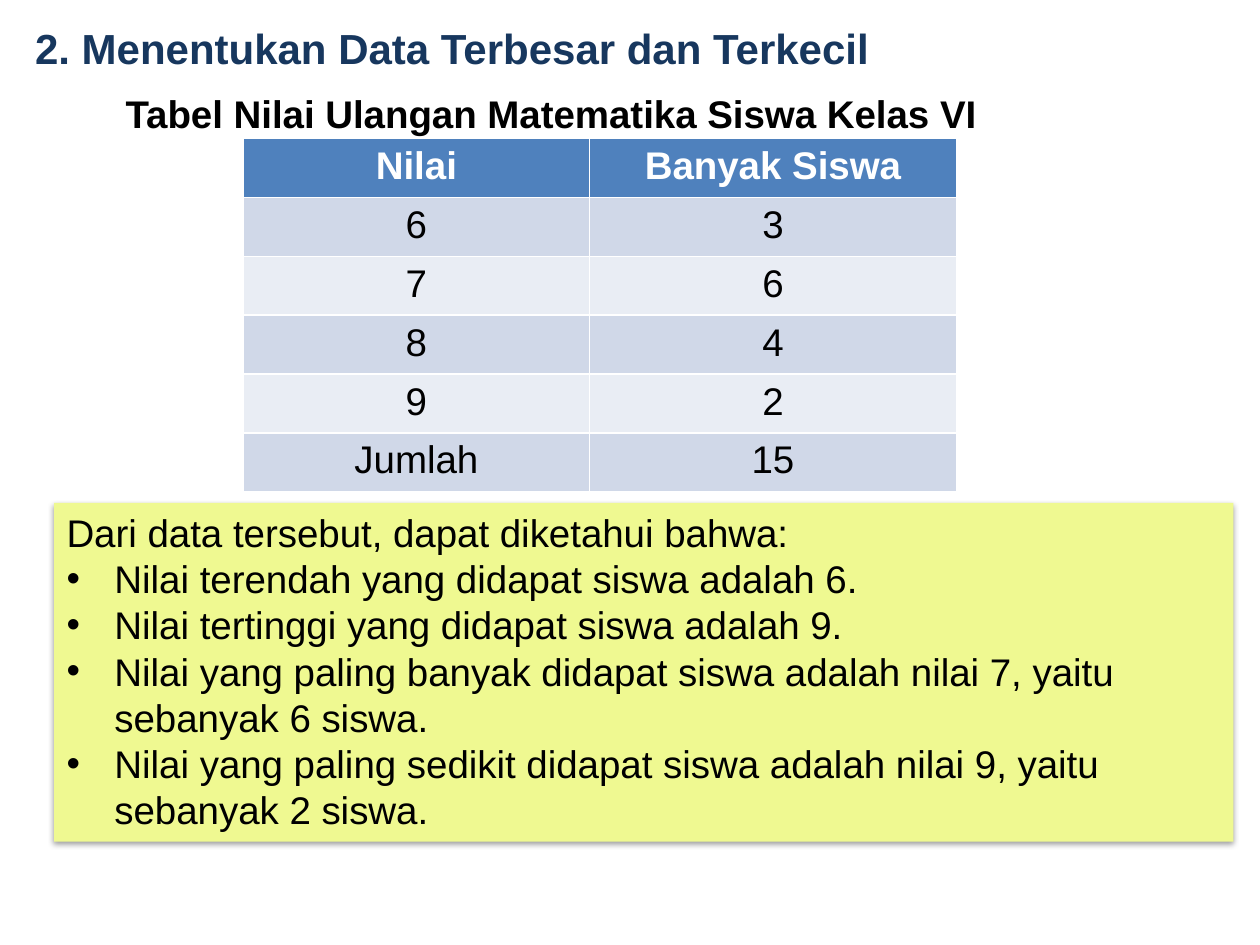
from lxml import etree
from pptx import Presentation
from pptx.dml.color import RGBColor
from pptx.enum.shapes import MSO_SHAPE
from pptx.enum.text import MSO_ANCHOR, PP_ALIGN
from pptx.oxml import parse_xml
from pptx.oxml.ns import nsdecls, qn
from pptx.util import Inches, Pt

LEFT, CENTER = PP_ALIGN.LEFT, PP_ALIGN.CENTER
RECTANGLE, TOP, MIDDLE = MSO_SHAPE.RECTANGLE, MSO_ANCHOR.TOP, MSO_ANCHOR.MIDDLE

# Content
HEADING = "2. Menentukan Data Terbesar dan Terkecil"
CAPTION = "Tabel Nilai Ulangan Matematika Siswa Kelas VI"
SCORES = [
    ("Nilai", "Banyak Siswa"),
    ("6", "3"),
    ("7", "6"),
    ("8", "4"),
    ("9", "2"),
    ("Jumlah", "15"),
]
FINDINGS_INTRO = "Dari data tersebut, dapat diketahui bahwa:"
FINDINGS = [
    "Nilai terendah yang didapat siswa adalah 6.",
    "Nilai tertinggi yang didapat siswa adalah 9.",
    "Nilai yang paling banyak didapat siswa adalah nilai 7, yaitu sebanyak 6 siswa.",
    "Nilai yang paling sedikit didapat siswa adalah nilai 9, yaitu sebanyak 2 siswa.",
]

# Style and layout
WHITE, BLACK, NAVY = "FFFFFF", "000000", "17375E"
HEADER_BLUE, BANDS, LIME = "4F81BD", ("E9EDF4", "D0D8E8"), "EFF991"
COLUMN_WIDTHS = (2.75, 2.91)
TABLE_HEIGHT = 2.8
BULLET_INDENT = Inches(0.38)


def rgb(value):
    return RGBColor.from_string(value)


def style(paragraph, size=22, color=BLACK, bold=False, align=LEFT):
    paragraph.alignment = align
    for run in paragraph.runs:
        font = run.font
        font.name, font.size, font.bold = "Arial", Pt(size), bold
        font.color.rgb = rgb(color)


def indent(paragraph, margin, first_line=0):
    properties = paragraph._p.get_or_add_pPr()
    properties.set("marL", str(margin))
    properties.set("indent", str(first_line))
    return properties


def add_panel(slide, box, fill, anchor):
    panel = slide.shapes.add_shape(RECTANGLE, *map(Inches, box))
    panel.shadow.inherit = False
    panel.fill.solid()
    panel.fill.fore_color.rgb = rgb(fill)
    panel.line.fill.background()
    panel.text_frame.word_wrap = True
    panel.text_frame.vertical_anchor = anchor
    return panel


prs = Presentation()
prs.slide_width, prs.slide_height = Inches(10), Inches(7.5)
slide = prs.slides.add_slide(prs.slide_layouts[6])

# Heading
heading = slide.shapes.add_textbox(*map(Inches, (0, 0.13, 7.07, 0.5))).text_frame
heading.text = HEADING
heading.word_wrap = False
indent(heading.paragraphs[0], Inches(0.18))
style(heading.paragraphs[0], size=24, color=NAVY, bold=True)

# Table caption
caption = add_panel(slide, (0.83, 0.66, 7.09, 0.47), WHITE, MIDDLE).text_frame
caption.text = CAPTION
style(caption.paragraphs[0], bold=True, align=CENTER)

# Findings panel with a soft shadow below it
findings_panel = add_panel(slide, (0.43, 3.99, 9.36, 2.69), LIME, TOP)
findings_panel._element.spPr.find(qn("a:effectLst")).append(parse_xml(
    f'<a:outerShdw {nsdecls("a")} blurRad="{Pt(3.1)}" dist="{Pt(1.6)}" '
    'dir="5400000" rotWithShape="0"><a:srgbClr val="000000">'
    '<a:alpha val="38000"/></a:srgbClr></a:outerShdw>'))
findings = findings_panel.text_frame
findings.text = FINDINGS_INTRO
style(findings.paragraphs[0])
for finding in FINDINGS:
    item = findings.add_paragraph()
    item.text = finding
    properties = indent(item, BULLET_INDENT, -BULLET_INDENT)
    etree.SubElement(properties, qn("a:buFont")).set("typeface", "Arial")
    etree.SubElement(properties, qn("a:buChar")).set("char", "•")
    style(item)

# Score table
scores = slide.shapes.add_table(
    len(SCORES), len(COLUMN_WIDTHS), Inches(1.93), Inches(1.1),
    Inches(sum(COLUMN_WIDTHS)), Inches(TABLE_HEIGHT)).table
for column, width in zip(scores.columns, COLUMN_WIDTHS):
    column.width = Inches(width)
for r, row in enumerate(SCORES):
    is_header = r == 0
    for c, value in enumerate(row):
        cell = scores.cell(r, c)
        cell.text = value
        cell.fill.solid()
        cell.fill.fore_color.rgb = rgb(HEADER_BLUE if is_header else BANDS[r % 2])
        style(cell.text_frame.paragraphs[0], bold=is_header,
              color=WHITE if is_header else BLACK, align=CENTER)

prs.save("out.pptx")
